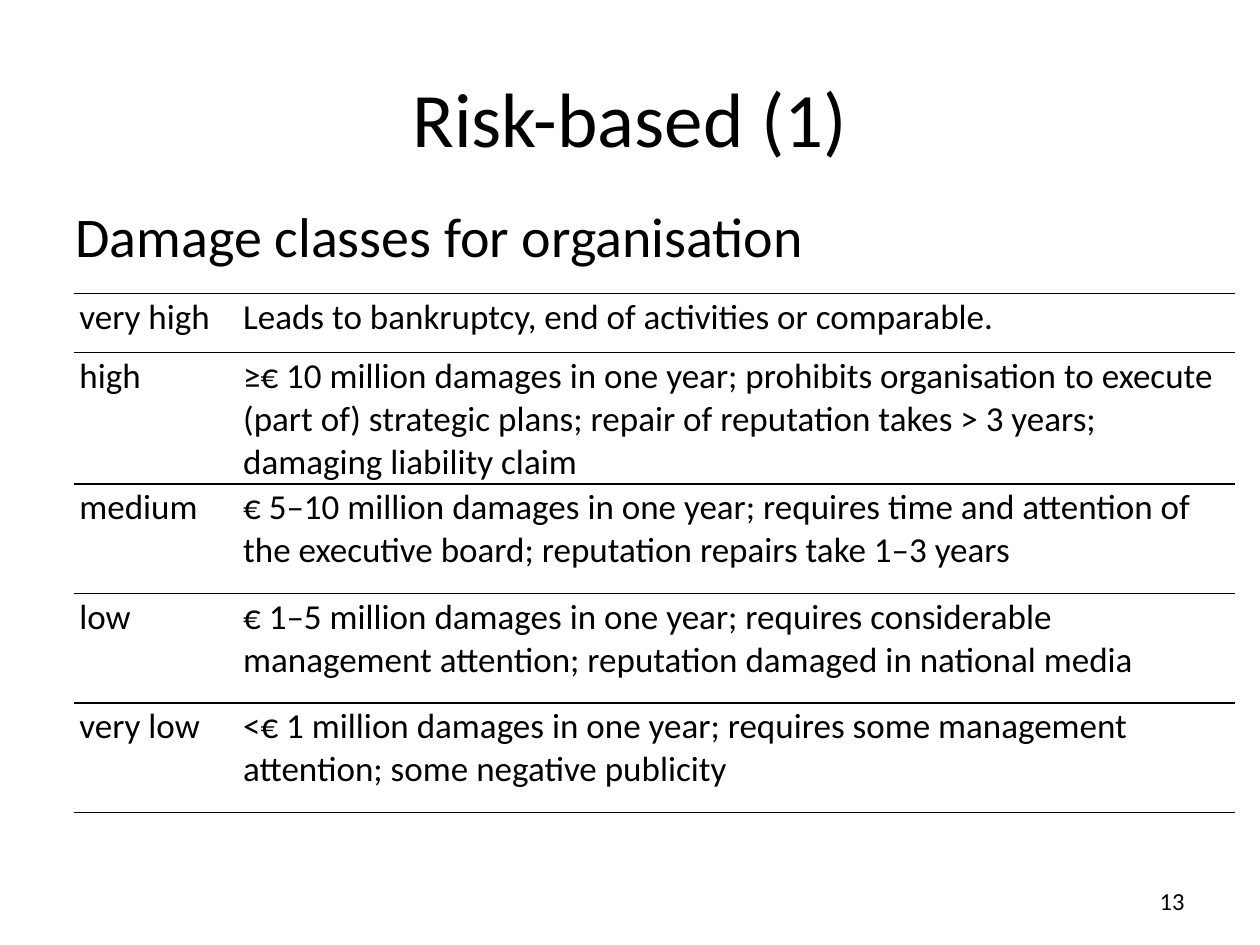
from dataclasses import dataclass

from lxml.etree import SubElement
from pptx import Presentation
from pptx.dml.color import RGBColor
from pptx.enum.text import MSO_ANCHOR, PP_ALIGN
from pptx.oxml.ns import qn
from pptx.util import Inches, Pt


@dataclass(frozen=True)
class Theme:
    font: str = "Calibri"
    ink: str = "000000"
    title: int = 44
    heading: int = 32
    table: int = 20
    number: int = 14
    rule: int = 1


theme = Theme()


def write(frame, text, size, align=PP_ALIGN.LEFT, anchor=MSO_ANCHOR.TOP):
    frame.word_wrap = True
    frame.vertical_anchor = anchor
    paragraph = frame.paragraphs[0]
    paragraph.alignment = align
    run = paragraph.add_run()
    run.text = text
    run.font.name = theme.font
    run.font.size = Pt(size)
    run.font.color.rgb = RGBColor.from_string(theme.ink)


def rule_cell(cell):
    cell.fill.background()
    properties = cell._tc.get_or_add_tcPr()
    for position, side in enumerate(("lnL", "lnR", "lnT", "lnB")):
        line = SubElement(properties, qn(f"a:{side}"), w=str(Pt(theme.rule)))
        if side in ("lnT", "lnB"):
            fill = SubElement(line, qn("a:solidFill"))
            SubElement(fill, qn("a:srgbClr"), val=theme.ink)
        else:
            SubElement(line, qn("a:noFill"))
        properties.insert(position, line)


presentation = Presentation()
presentation.slide_width = Inches(10)
presentation.slide_height = Inches(7.5)
slide = presentation.slides.add_slide(presentation.slide_layouts[6])

title = slide.shapes.add_textbox(Inches(0.5), Inches(0.3), Inches(9), Inches(1.25))
write(title.text_frame, "Risk-based (1)", size=theme.title,
      align=PP_ALIGN.CENTER, anchor=MSO_ANCHOR.MIDDLE)

heading = slide.shapes.add_textbox(Inches(0.5), Inches(1.55), Inches(9), Inches(0.58))
write(heading.text_frame, "Damage classes for organisation", size=theme.heading)

page_number = slide.shapes.add_textbox(Inches(7.17), Inches(6.95), Inches(2.33), Inches(0.4))
write(page_number.text_frame, "13", size=theme.number,
      align=PP_ALIGN.RIGHT, anchor=MSO_ANCHOR.MIDDLE)

damage_classes = [
    ("very high", "Leads to bankruptcy, end of activities or comparable.", 0.47),
    ("high", "≥€ 10 million damages in one year; prohibits organisation to execute "
     "(part of) strategic plans; repair of reputation takes > 3 years; "
     "damaging liability claim", 1.04),
    ("medium", "€ 5–10 million damages in one year; requires time and attention of "
     "the executive board; reputation repairs take 1–3 years", 0.87),
    ("low", "€ 1–5 million damages in one year; requires considerable "
     "management attention; reputation damaged in national media", 0.87),
    ("very low", "<€ 1 million damages in one year; requires some management "
     "attention; some negative publicity", 0.87),
]
class_widths = (1.3, 7.91)

damage_table = slide.shapes.add_table(
    len(damage_classes), len(class_widths),
    Inches(0.59), Inches(2.33), Inches(sum(class_widths)),
    Inches(sum(height for *_, height in damage_classes)),
).table
damage_table.first_row = False
damage_table.horz_banding = False
for column, width in zip(damage_table.columns, class_widths):
    column.width = Inches(width)

for row, (level, consequence, height) in zip(damage_table.rows, damage_classes):
    row.height = Inches(height)
    for cell, text in zip(row.cells, (level, consequence)):
        cell.margin_left = cell.margin_right = Inches(0.04)
        cell.margin_top = cell.margin_bottom = Inches(0.02)
        write(cell.text_frame, text, size=theme.table)
        rule_cell(cell)

presentation.save("out.pptx")
